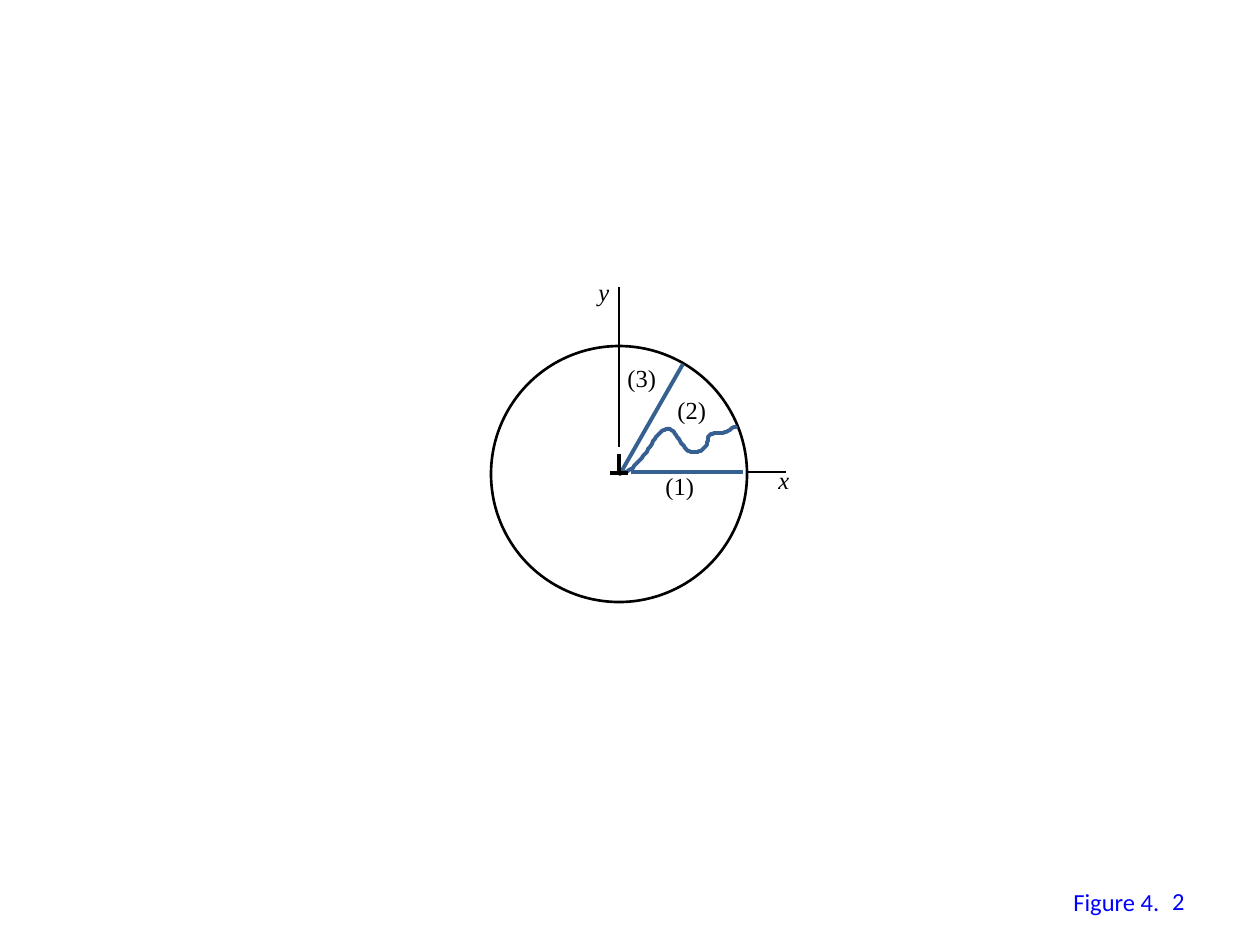
from pptx import Presentation
from pptx.dml.color import RGBColor
from pptx.enum.shapes import MSO_CONNECTOR as Connector, MSO_SHAPE as Preset
from pptx.enum.text import MSO_ANCHOR as Anchor, MSO_AUTO_SIZE as AutoSize, PP_ALIGN as Align
from pptx.oxml.ns import qn
from pptx.util import Pt
from lxml import etree

EMU_PER_PX = 914400 / 126
BLACK, STEEL, BLUE = "000000", "376092", "0000FF"
MATH_FONT, FOOTER_FONT = "Times New Roman", "Calibri"
CURVE_STEPS = 8


def emu(px):
    return round(px * EMU_PER_PX)


def color(hex_string):
    return RGBColor.from_string(hex_string)


def smooth_points(knots):
    padded = [knots[0], *knots, knots[-1]]
    points = [knots[0]]
    for before, start, end, after in zip(padded, padded[1:], padded[2:], padded[3:]):
        for step in range(1, CURVE_STEPS + 1):
            t = step / CURVE_STEPS
            points.append(tuple(
                b + t / 2 * (c - a + t * (2 * a - 5 * b + 4 * c - d + t * (3 * b - a - 3 * c + d)))
                for a, b, c, d in zip(before, start, end, after)))
    return points


class Figure:
    def __init__(self, page, text_size=14):
        self.shapes = page.shapes
        self.text_size = text_size

    def stroke(self, item, hex_string, width):
        item.line.color.rgb = color(hex_string)
        item.line.width = Pt(width)

    def line(self, start, end, hex_string, width, parent=None):
        shapes = parent.shapes if parent else self.shapes
        connector = shapes.add_connector(Connector.STRAIGHT, *map(emu, start + end))
        self.stroke(connector, hex_string, width)
        etree.SubElement(connector.element.spPr, qn("a:effectLst"))

    def circle(self, left, top, diameter, hex_string, width):
        circle = self.shapes.add_shape(Preset.OVAL, *map(emu, (left, top, diameter, diameter)))
        circle.shadow.inherit = False
        circle.fill.background()
        self.stroke(circle, hex_string, width)

    def curve(self, knots, hex_string, width):
        first, *others = smooth_points(knots)
        builder = self.shapes.build_freeform(*first, scale=EMU_PER_PX)
        builder.add_line_segments(others, close=False)
        curve = builder.convert_to_shape()
        curve.shadow.inherit = False
        curve.fill.background()
        self.stroke(curve, hex_string, width)

    def text(self, words, left, top, width, height=43, font=MATH_FONT, hex_string=BLACK,
             italic=False, align=Align.LEFT, anchor=Anchor.TOP, wrap=False):
        box = self.shapes.add_textbox(*map(emu, (left, top, width, height)))
        frame = box.text_frame
        frame.word_wrap = wrap
        frame.auto_size = AutoSize.NONE if wrap else AutoSize.SHAPE_TO_FIT_TEXT
        frame.vertical_anchor = anchor
        para = frame.paragraphs[0]
        para.alignment = align
        span = para.add_run()
        span.text = words
        span.font.size = Pt(self.text_size)
        span.font.name = font
        span.font.italic = italic
        span.font.color.rgb = color(hex_string)


def main():
    deck = Presentation()
    deck.slide_width, deck.slide_height = emu(1260), emu(945)
    figure = Figure(deck.slides.add_slide(deck.slide_layouts[6]))

    figure.text("Figure 4.", 1061, 881, 112, font=FOOTER_FONT, hex_string=BLUE)
    for name, left, top in (("x", 766, 459), ("y", 586, 271)):
        figure.text(name, left, top, 43, italic=True)
    for label, left, top in (("(1)", 653, 465), ("(2)", 665, 389), ("(3)", 615, 357)):
        figure.text(label, left, top, 54)

    figure.circle(491, 346, 256, BLACK, 1.5)
    figure.line((683, 364), (620, 474), STEEL, 2.25)
    wandering_path = [
        (619, 474), (631, 469), (645, 454), (658, 435), (669, 429), (678, 438), (687, 450),
        (697, 452), (706, 446), (709, 436), (716, 433), (723, 433), (737, 426)]
    figure.curve(wandering_path, STEEL, 2.25)
    figure.line((743, 472), (631, 472), STEEL, 2.25)

    figure.line((619, 287), (619, 447), BLACK, 1.5)
    origin_mark = figure.shapes.add_group_shape()
    figure.line((628, 473), (610, 473), BLACK, 2.25, origin_mark)
    figure.line((619, 454), (619, 473), BLACK, 2.25, origin_mark)
    figure.line((786, 472), (748, 472), BLACK, 1.5)

    figure.text("2", 903, 876, 294, 50, font=FOOTER_FONT, hex_string=BLUE,
                align=Align.RIGHT, anchor=Anchor.MIDDLE, wrap=True)
    deck.save("out.pptx")


if __name__ == "__main__":
    main()
